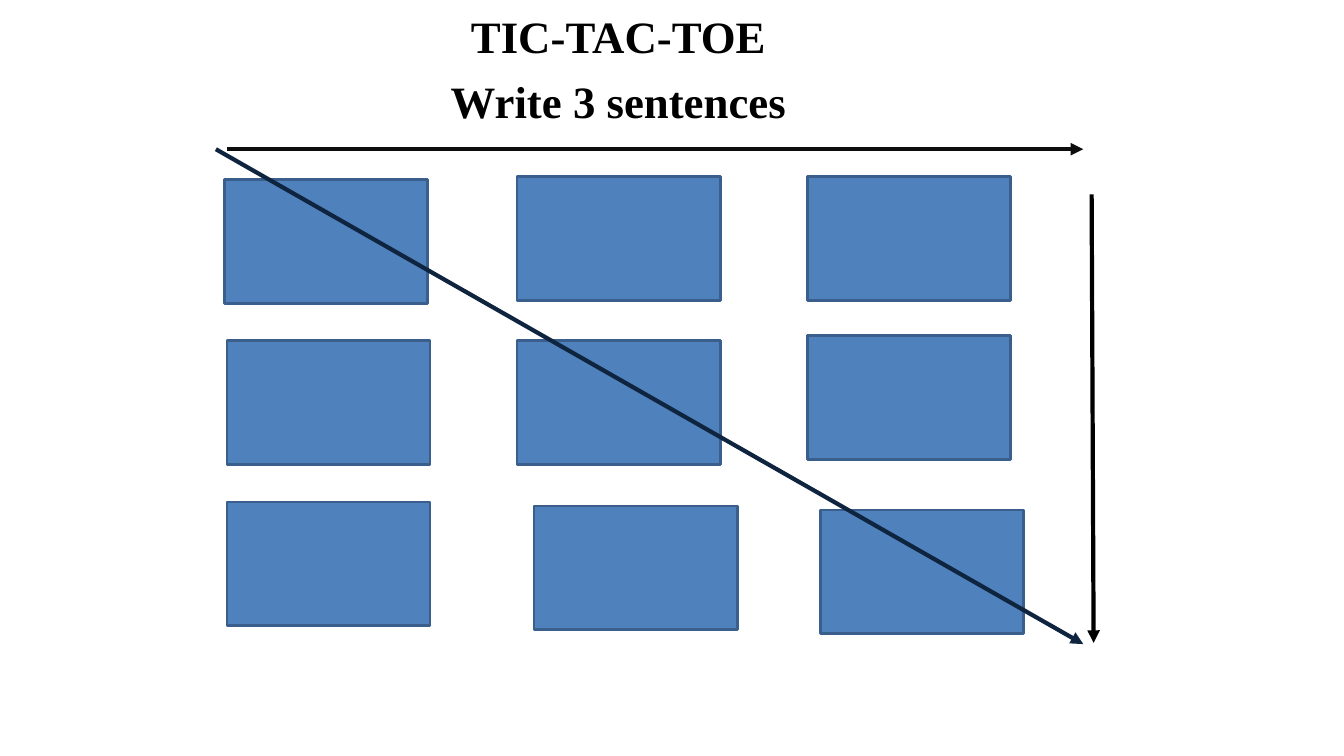
from lxml.etree import SubElement
from pptx import Presentation
from pptx.dml.color import RGBColor
from pptx.enum.shapes import MSO_CONNECTOR, MSO_SHAPE
from pptx.enum.text import MSO_ANCHOR, MSO_AUTO_SIZE, PP_ALIGN
from pptx.oxml.ns import qn
from pptx.util import Cm, Pt

COLOURS = {
    "text": "000000",
    "box": "4F81BD",
    "box_line": "3A5F8C",
    "diagonal": "0F243E",
    "across": "0D0D0D",
    "down": "000000",
}

presentation = Presentation()
presentation.slide_width = Cm(33.87)
presentation.slide_height = Cm(19.05)
slide = presentation.slides.add_slide(presentation.slide_layouts[5])

# Title
title = slide.shapes.title
title.left, title.top, title.width, title.height = Cm(2.62), Cm(0.1), Cm(25.93), Cm(3.3)
frame = title.text_frame
frame.word_wrap = True
frame.auto_size = MSO_AUTO_SIZE.NONE
frame.vertical_anchor = MSO_ANCHOR.TOP
for index, line in enumerate(["TIC-TAC-TOE", "Write 3 sentences"]):
    paragraph = frame.add_paragraph() if index else frame.paragraphs[0]
    paragraph.alignment = PP_ALIGN.CENTER
    paragraph.space_before = Pt(8 * index)
    run = paragraph.add_run()
    run.text = line
    run.font.name = "Times New Roman"
    run.font.size = Pt(32)
    run.font.bold = True
    run.font.color.rgb = RGBColor.from_string(COLOURS["text"])

# Board: three rows of slightly uneven boxes, (left, top) in centimetres
board = [
    [(5.66, 4.52), (13.03, 4.45), (20.35, 4.45)],
    [(5.72, 8.59), (13.03, 8.59), (20.35, 8.46)],
    [(5.72, 12.65), (13.46, 12.75), (20.68, 12.85)],
]
for row in board:
    for left, top in row:
        box = slide.shapes.add_shape(
            MSO_SHAPE.RECTANGLE, Cm(left), Cm(top), Cm(5.12), Cm(3.12))
        box.shadow.inherit = False
        box.fill.solid()
        box.fill.fore_color.rgb = RGBColor.from_string(COLOURS["box"])
        box.line.color.rgb = RGBColor.from_string(COLOURS["box_line"])
        box.line.width = Pt(2)

# Winning directions: start x, start y, end x, end y in centimetres
arrows = {
    "diagonal": (5.44, 3.76, 27.3, 16.23),
    "across": (5.72, 3.76, 27.3, 3.76),
    "down": (27.51, 4.9, 27.56, 16.2),
}
for direction, ends in arrows.items():
    arrow = slide.shapes.add_connector(
        MSO_CONNECTOR.STRAIGHT, *[Cm(value) for value in ends])
    arrow.line.color.rgb = RGBColor.from_string(COLOURS[direction])
    arrow.line.width = Pt(3)
    SubElement(arrow.line._get_or_add_ln(), qn("a:tailEnd"), type="triangle")
    SubElement(arrow._element.spPr, qn("a:effectLst"))

presentation.save("out.pptx")
